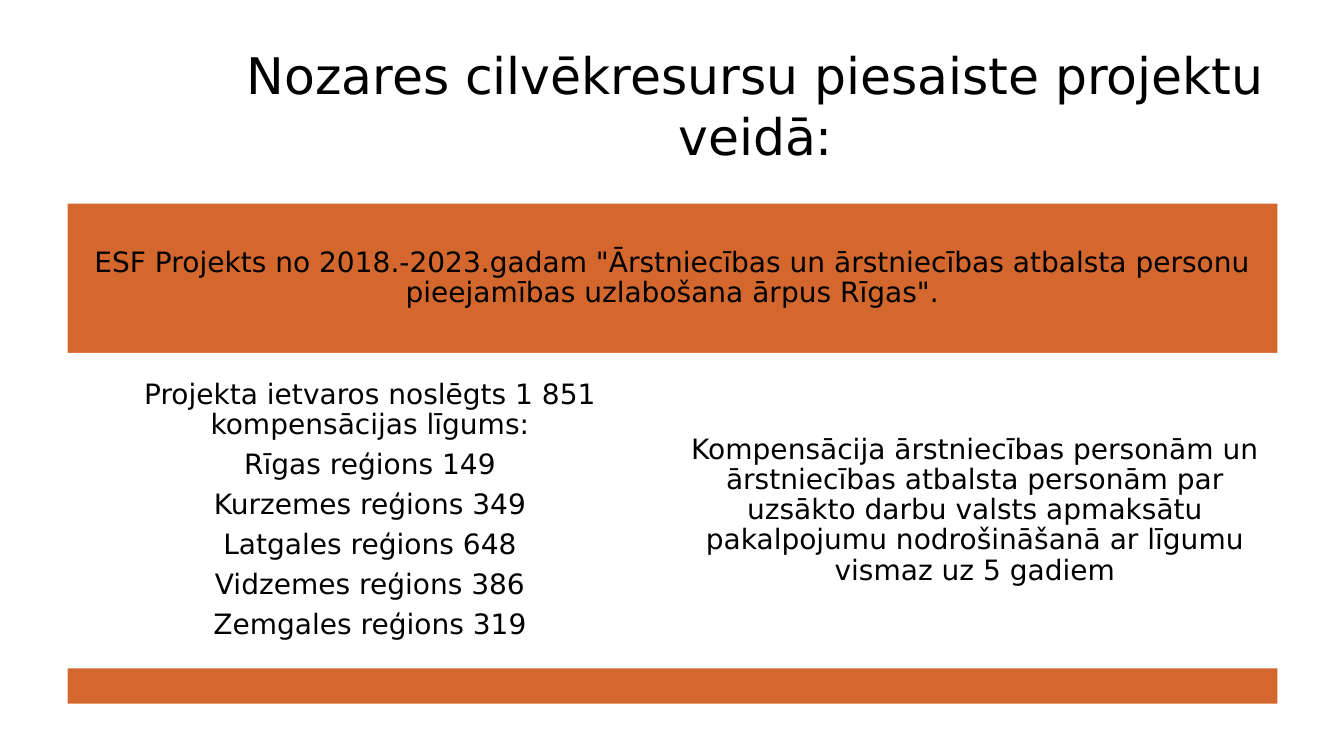
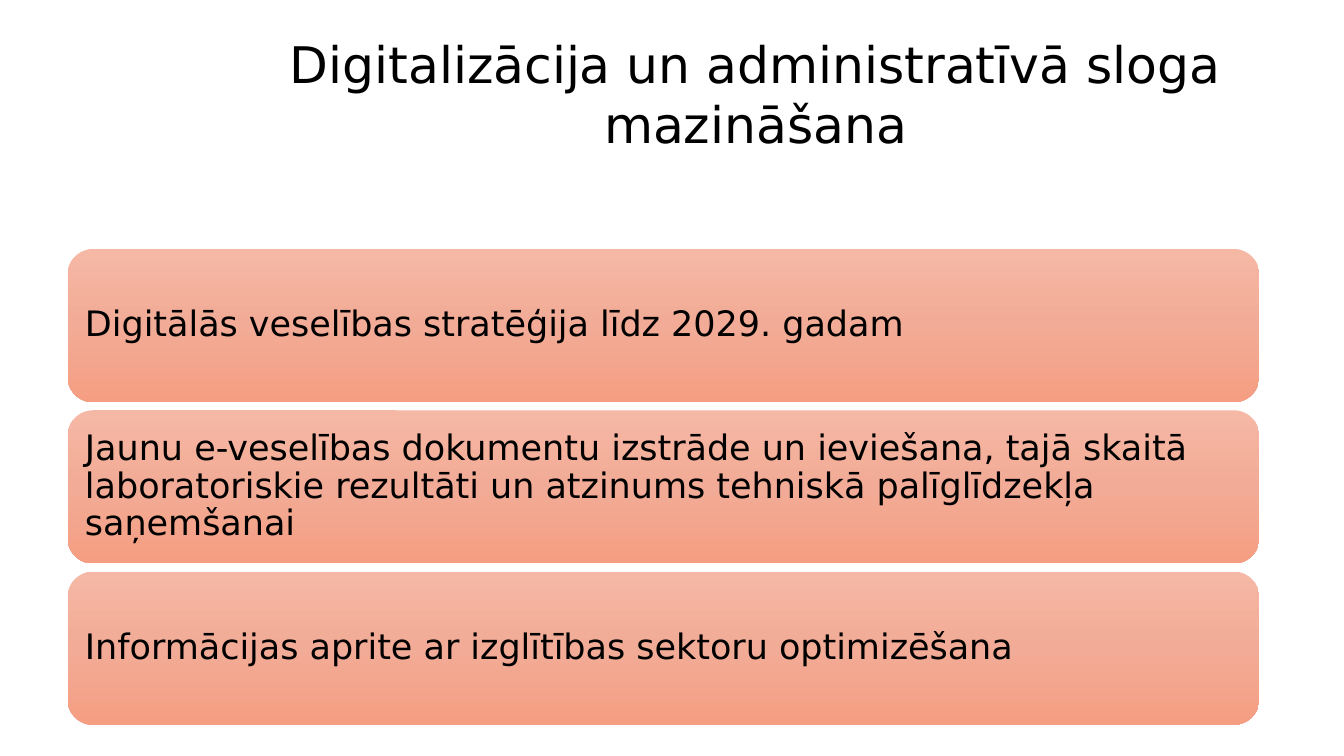
from copy import deepcopy

from pptx import Presentation
from pptx.dml.color import RGBColor
from pptx.enum.shapes import MSO_SHAPE
from pptx.enum.text import MSO_ANCHOR, MSO_AUTO_SIZE, PP_ALIGN
from pptx.oxml.ns import qn
from pptx.util import Inches, Pt

FONT = "DejaVu Sans"
BLACK, WHITE, ORANGE = "000000", "FFFFFF", "D3672D"
CARD_GRADIENT = [(0, "F5B8A5"), (0.5, "F2AB96"), (1, "F59E82")]
LEFT = 0.67

PROJECT_TITLE = "Nozares cilvēkresursu piesaiste projektu veidā:"
PROJECT = (
    'ESF Projekts no 2018.-2023.gadam "Ārstniecības un ārstniecības atbalsta '
    'personu pieejamības uzlabošana ārpus Rīgas".'
)
CONTRACTS = "Projekta ietvaros noslēgts 1 851 kompensācijas līgums:"
REGIONS = [
    ("Rīgas", 149),
    ("Kurzemes", 349),
    ("Latgales", 648),
    ("Vidzemes", 386),
    ("Zemgales", 319),
]
COMPENSATION = (
    "Kompensācija ārstniecības personām un ārstniecības atbalsta personām par "
    "uzsākto darbu valsts apmaksātu pakalpojumu nodrošināšanā ar līgumu vismaz "
    "uz 5 gadiem"
)

DIGITAL_TITLE = "Digitalizācija un administratīvā sloga mazināšana"
DIGITAL_TASKS = [
    "Digitālās veselības stratēģija līdz 2029. gadam",
    "Jaunu e-veselības dokumentu izstrāde un ieviešana, tajā skaitā "
    "laboratoriskie rezultāti un atzinums tehniskā palīglīdzekļa saņemšanai",
    "Informācijas aprite ar izglītības sektoru optimizēšana",
]


def rgb(value):
    return RGBColor.from_string(value)


def add_text(paragraph, text, size, align):
    paragraph.alignment = align
    run = paragraph.add_run()
    run.text = text
    run.font.name = FONT
    run.font.size = Pt(size)
    run.font.color.rgb = rgb(BLACK)


def add_titled_slide(prs, title, top, height):
    slide = prs.slides.add_slide(prs.slide_layouts[5])
    holder = slide.shapes.title
    holder.left, holder.top = Inches(2.33), Inches(top)
    holder.width, holder.height = Inches(10.33), Inches(height)
    frame = holder.text_frame
    frame.auto_size = MSO_AUTO_SIZE.NONE
    frame.vertical_anchor = MSO_ANCHOR.MIDDLE
    add_text(frame.paragraphs[0], title, 36, PP_ALIGN.CENTER)
    return slide


def add_panel(slide, kind, box, lines, size, align, inset):
    """Add an unfilled, unlined shape holding one paragraph per line."""
    panel = slide.shapes.add_shape(kind, *map(Inches, box))
    panel.shadow.inherit = False
    panel.line.fill.background()
    frame = panel.text_frame
    frame.word_wrap = True
    frame.vertical_anchor = MSO_ANCHOR.MIDDLE
    frame.margin_left = frame.margin_right = Inches(inset)
    frame.margin_top = frame.margin_bottom = Inches(inset)
    for i, line in enumerate(lines):
        paragraph = frame.add_paragraph() if i else frame.paragraphs[0]
        paragraph.line_spacing = 0.9
        paragraph.space_after = Pt(0.35 * size)
        add_text(paragraph, line, size, align)
    return panel


def fill_gradient(shape, stops):
    """Fill from top to bottom with any number of (position, colour) stops."""
    shape.fill.gradient()
    shape.fill.gradient_angle = 270
    stop_list = shape.element.find(".//" + qn("a:gsLst"))
    while len(stop_list) < len(stops):
        stop_list.append(deepcopy(stop_list[0]))
    for stop, (position, colour) in zip(shape.fill.gradient_stops, stops):
        stop.position = position
        stop.color.rgb = rgb(colour)


def build_project_slide(prs):
    slide = add_titled_slide(prs, PROJECT_TITLE, 0.53, 1.02)
    width, half = 12, 6
    header_top, body_top, footer_top = 2.02, 3.5, 6.63
    body_height = footer_top - body_top
    regions = [f"{name} reģions {count}" for name, count in REGIONS]
    panels = [
        ((LEFT, header_top, width, body_top - header_top), [PROJECT], ORANGE),
        ((LEFT, body_top, half, body_height), [CONTRACTS] + regions, WHITE),
        ((LEFT + half, body_top, half, body_height), [COMPENSATION], WHITE),
        ((LEFT, footer_top, width, 0.35), [], ORANGE),
    ]
    for box, lines, colour in panels:
        panel = add_panel(
            slide, MSO_SHAPE.RECTANGLE, box, lines, 20, PP_ALIGN.CENTER, 0.08
        )
        panel.fill.solid()
        panel.fill.fore_color.rgb = rgb(colour)


def build_digital_slide(prs):
    slide = add_titled_slide(prs, DIGITAL_TITLE, 0.3, 1.25)
    top, height, gap = 2.47, 1.52, 0.08
    for i, task in enumerate(DIGITAL_TASKS):
        box = (LEFT, top + i * (height + gap), 11.82, height)
        card = add_panel(
            slide, MSO_SHAPE.ROUNDED_RECTANGLE, box, [task], 25, PP_ALIGN.LEFT, 0.1
        )
        fill_gradient(card, CARD_GRADIENT)


def main():
    prs = Presentation()
    prs.slide_width, prs.slide_height = Inches(13.33), Inches(7.5)
    build_project_slide(prs)
    build_digital_slide(prs)
    prs.save("out.pptx")


if __name__ == "__main__":
    main()
